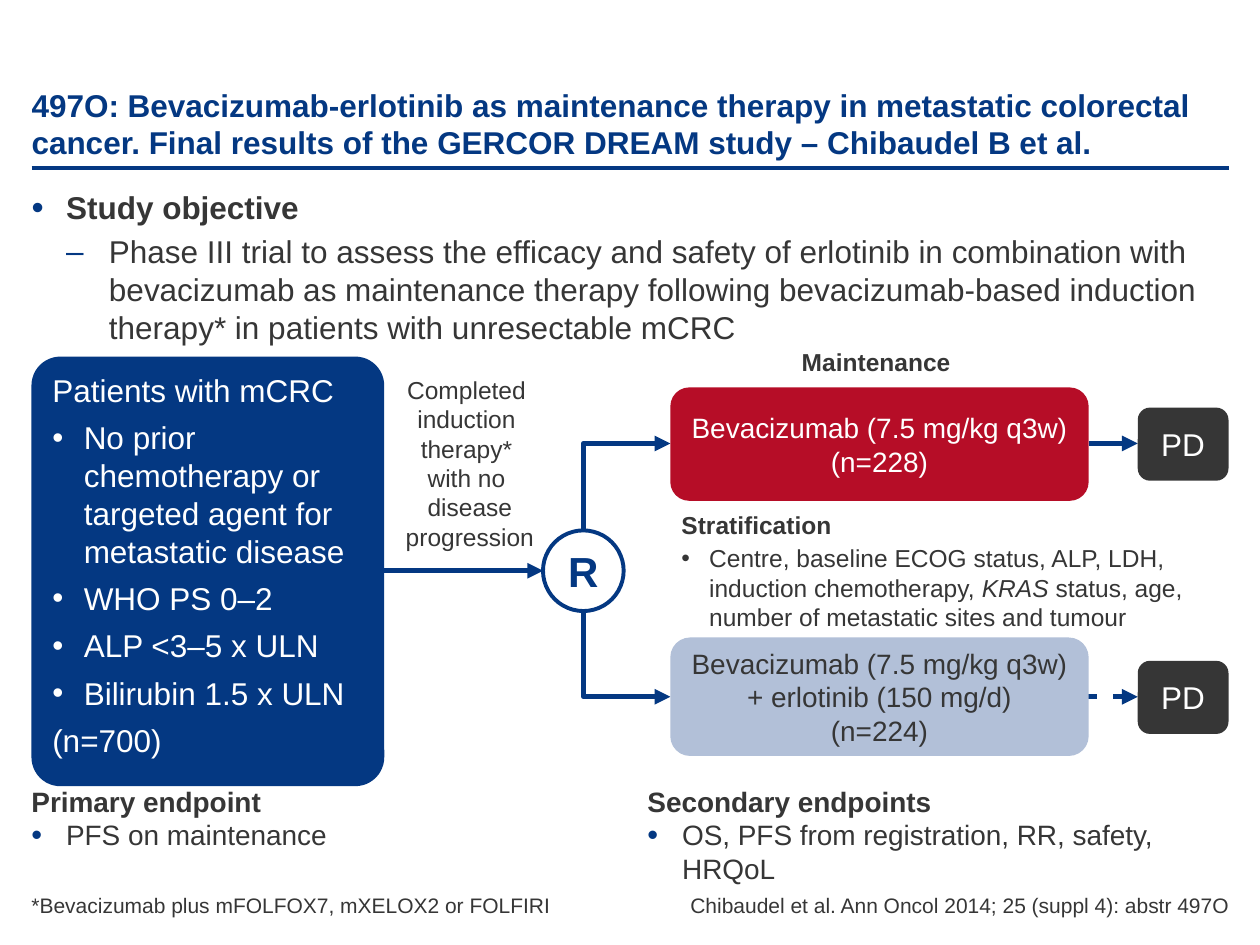
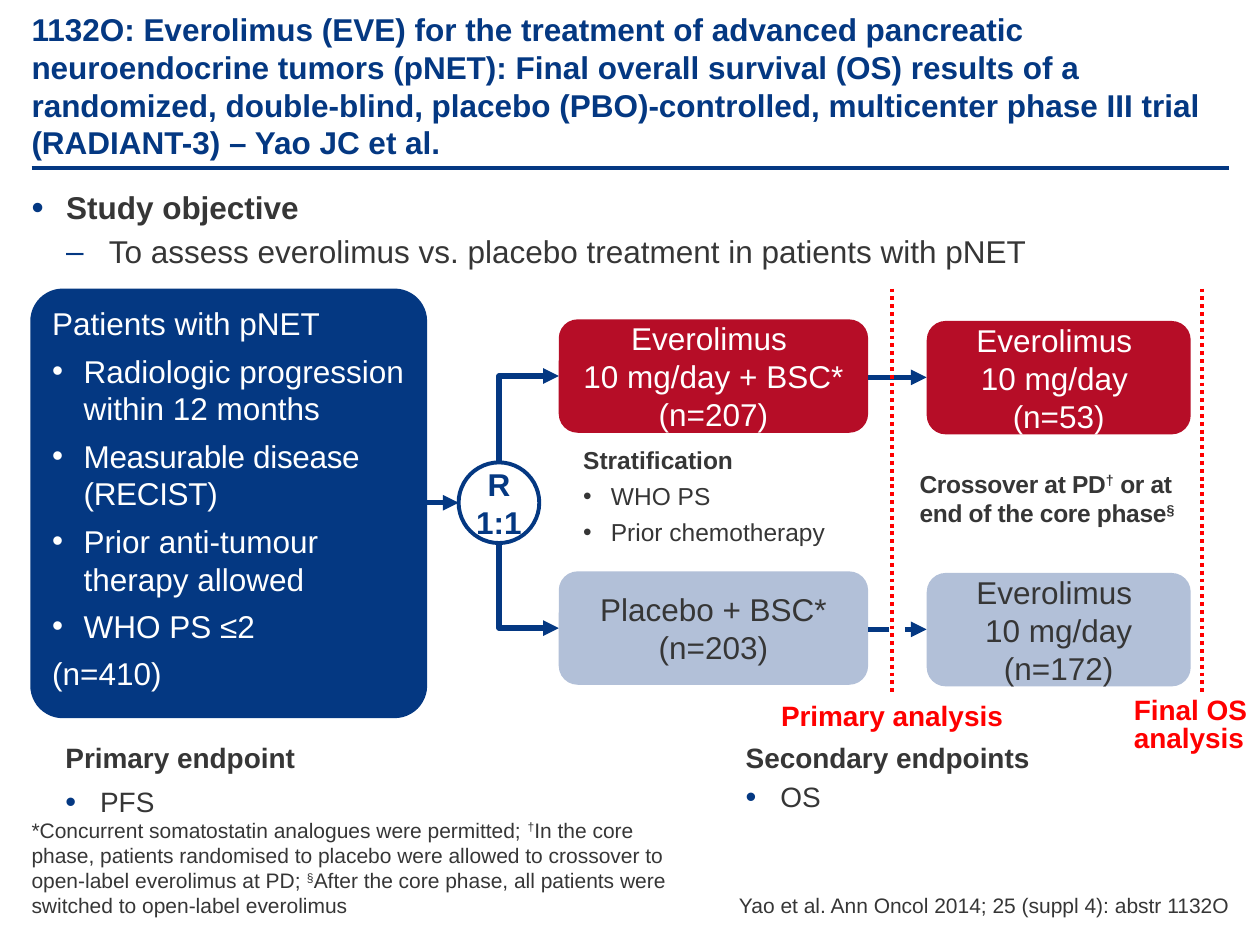
from dataclasses import dataclass, field
from typing import Any, NamedTuple, Optional

from lxml import etree
from pptx import Presentation
from pptx.dml.color import RGBColor
from pptx.enum.dml import MSO_LINE
from pptx.enum.shapes import MSO_CONNECTOR, MSO_SHAPE
from pptx.enum.text import MSO_ANCHOR, MSO_AUTO_SIZE, PP_ALIGN
from pptx.oxml.ns import qn
from pptx.util import Emu, Inches, Pt

LEFT, CENTER, RIGHT = PP_ALIGN.LEFT, PP_ALIGN.CENTER, PP_ALIGN.RIGHT
TOP, MIDDLE, BOTTOM = MSO_ANCHOR.TOP, MSO_ANCHOR.MIDDLE, MSO_ANCHOR.BOTTOM
FIXED, GROW = MSO_AUTO_SIZE.NONE, MSO_AUTO_SIZE.SHAPE_TO_FIT_TEXT
ROUNDED, ELLIPSE = MSO_SHAPE.ROUNDED_RECTANGLE, MSO_SHAPE.OVAL
STRAIGHT, ELBOW = MSO_CONNECTOR.STRAIGHT, MSO_CONNECTOR.ELBOW
DASH, DOTS = MSO_LINE.DASH, MSO_LINE.ROUND_DOT

FONT = "Arial"
NAVY, GREY, WHITE = "043882", "363636", "FFFFFF"
CRIMSON, PALE, RED = "B60D27", "B2C0D8", "FF0000"
COLUMNS, ROWS = 40, 30
CELL = Inches(0.25)
MARGIN, RIGHT_EDGE = 1, 39


class Area(NamedTuple):
    left: float
    top: float
    width: float
    height: float


class Bullet(NamedTuple):
    margin: float
    hanging: float
    symbol: str
    color: Optional[str] = None
    percent: int = 100


class Run(NamedTuple):
    text: str
    formats: dict[str, Any] = {}
    attributes: dict[str, str] = {}


@dataclass
class Line:
    content: Any
    bullet: Optional[Bullet] = None
    formats: dict[str, Any] = field(default_factory=dict)
    spacing: dict[str, Any] = field(default_factory=dict)
    level: int = 0


@dataclass
class Style:
    size: float
    color: str = GREY
    bold: bool = False
    align: Any = LEFT
    anchor: Any = TOP
    insets: tuple[float, float, float, float] = (0.4, 0.2, 0.4, 0.2)
    wrap: bool = True
    fit: Any = FIXED
    after: float = 0


MAIN = Bullet(1.1, 1.1, "•", NAVY, 110)
SUB = Bullet(2.46, 1.36, "–", NAVY)
CRITERION = Bullet(1, 1, "•")
SMALL = Bullet(0.88, 0.88, "•")
PLAIN = {"bold": False}
TIGHT = {"spc": "-20"}
RAISED = {"baseline": "30000"}

TITLE = Style(18, NAVY, True, anchor=BOTTOM, insets=(0, 0.2, 0, 0))
BODY = Style(18, bold=True, insets=(0, 0.2, 0, 0.2), after=3.6)
FOOTNOTE = Style(12, anchor=BOTTOM, insets=(0, 0, 0, 0), fit=GROW)
CITATION = Style(12, align=RIGHT, anchor=BOTTOM, insets=(0, 0, 0, 0), wrap=False, fit=GROW)
POPULATION = Style(18, WHITE, fit=GROW, after=5.4)
FLUSH = (0, 0.2, 0, 0.2)
BOX_INSETS = (0.4, 0, 0.4, 0)


def rgb(color: str) -> RGBColor:
    return RGBColor.from_string(color)


def grid(value: float) -> Emu:
    return Emu(round(value * CELL))


def apply(target: Any, formats: dict[str, Any]) -> None:
    for name, value in formats.items():
        setattr(target, name, value)


def set_bullet(paragraph: Any, bullet: Optional[Bullet]) -> None:
    properties = paragraph._p.get_or_add_pPr()
    margin, hanging = (bullet.margin, bullet.hanging) if bullet else (0, 0)
    properties.set("marL", str(grid(margin)))
    properties.set("indent", str(-grid(hanging)))
    if bullet is None:
        etree.SubElement(properties, qn("a:buNone"))
        return
    if bullet.color:
        holder = etree.SubElement(properties, qn("a:buClr"))
        etree.SubElement(holder, qn("a:srgbClr"), val=bullet.color)
    etree.SubElement(properties, qn("a:buSzPct"), val=str(bullet.percent * 1000))
    etree.SubElement(properties, qn("a:buFont"), typeface=FONT)
    etree.SubElement(properties, qn("a:buChar"), char=bullet.symbol)


def write_run(paragraph: Any, piece: Run, style: Style, formats: dict[str, Any]) -> None:
    for index, text in enumerate(piece.text.split("\n")):
        if index:
            paragraph.add_line_break()
        run = paragraph.add_run()
        run.text = text
        base = {"name": FONT, "size": Pt(style.size), "bold": style.bold}
        apply(run.font, base | formats | piece.formats)
        run.font.color.rgb = rgb(style.color)
        for name, value in piece.attributes.items():
            run._r.get_or_add_rPr().set(name, value)


def write_text(shape: Any, lines: list[Line], style: Style) -> None:
    frame = shape.text_frame
    sides = ("margin_left", "margin_top", "margin_right", "margin_bottom")
    apply(frame, dict(zip(sides, map(grid, style.insets))))
    apply(frame, {"word_wrap": style.wrap, "auto_size": style.fit, "vertical_anchor": style.anchor})
    for index, line in enumerate(lines):
        paragraph = frame.add_paragraph() if index else frame.paragraphs[0]
        base = {"alignment": style.align, "space_before": Pt(0), "space_after": Pt(style.after),
                "level": line.level}
        apply(paragraph, base | line.spacing)
        set_bullet(paragraph, line.bullet)
        pieces = [Run(line.content)] if isinstance(line.content, str) else line.content
        for piece in pieces:
            write_run(paragraph, piece, style, line.formats)


def add_label(slide: Any, area: Area, lines: list[Line], style: Style) -> None:
    write_text(slide.shapes.add_textbox(*map(grid, area)), lines, style)


def fill_placeholder(shape: Any, area: Area, lines: list[Line], style: Style) -> None:
    apply(shape, dict(zip(("left", "top", "width", "height"), map(grid, area))))
    write_text(shape, lines, style)


def add_box(slide: Any, area: Area, color: str, lines: list[Line], style: Style,
            corner: float = 0.167) -> None:
    shape = slide.shapes.add_shape(ROUNDED, *map(grid, area))
    shape.shadow.inherit = False
    shape.adjustments[0] = corner
    shape.fill.solid()
    shape.fill.fore_color.rgb = rgb(color)
    shape.line.fill.background()
    write_text(shape, lines, style)


def add_arm(slide: Any, area: Area, color: str, texts: list[str], size: float) -> None:
    ink = GREY if color == PALE else WHITE
    style = Style(size, ink, align=CENTER, anchor=MIDDLE, insets=BOX_INSETS)
    add_box(slide, area, color, [Line(text) for text in texts], style)


def add_randomisation(slide: Any, left: float, top: float, texts: list[str], size: float) -> None:
    shape = slide.shapes.add_shape(ELLIPSE, *map(grid, Area(left, top, 2.56, 2.56)))
    shape.shadow.inherit = False
    shape.fill.background()
    shape.line.color.rgb = rgb(NAVY)
    shape.line.width = Pt(2.25)
    style = Style(size, NAVY, True, CENTER, MIDDLE, wrap=False)
    write_text(shape, [Line(text) for text in texts], style)


def add_line(slide: Any, start: tuple[float, float], end: tuple[float, float], color: str = NAVY,
             width: float = 3, dash: Any = None, arrow: bool = True, kind: Any = STRAIGHT) -> Any:
    connector = slide.shapes.add_connector(kind, *map(grid, start + end))
    connector.line.color.rgb = rgb(color)
    apply(connector.line, {"width": Pt(width), "dash_style": dash})
    if arrow:
        etree.SubElement(connector.line._get_or_add_ln(), qn("a:tailEnd"), type="triangle")
    etree.SubElement(connector._element.spPr, qn("a:effectLst"))
    return connector


def add_branch(slide: Any, start: tuple[float, float], end: tuple[float, float]) -> None:
    middle_x, middle_y = (start[0] + end[0]) / 2, (start[1] + end[1]) / 2
    half_rise = abs(end[1] - start[1]) / 2
    upward = end[1] < start[1]
    half_run = (end[0] - start[0]) / 2 * (-1 if upward else 1)
    connector = add_line(slide, (middle_x + half_rise, middle_y - half_run),
                         (middle_x - half_rise, middle_y + half_run), kind=ELBOW)
    properties = connector._element.spPr
    properties.find(qn("a:xfrm")).set("rot", str((90 if upward else 270) * 60000))
    properties.find(qn("a:prstGeom")).set("prst", "bentConnector2")


def add_population(slide: Any, area: Area, group: str, criteria: list[Any], count: str) -> None:
    lines = [Line(group), *(Line(text, CRITERION) for text in criteria), Line(count)]
    add_box(slide, area, NAVY, lines, POPULATION, 0.082)


def add_stratification(slide: Any, area: Area, factors: list[Any], after: float) -> None:
    lines = [Line("Stratification"), *(Line(factor, SMALL, PLAIN) for factor in factors)]
    add_label(slide, area, lines, Style(14, bold=True, after=after))


def add_endpoint(slide: Any, area: Area, heading: str, outcome: str, after: float = 0,
                 insets: tuple[float, float, float, float] = (0.4, 0.2, 0.4, 0.2)) -> None:
    lines = [Line(heading), Line(outcome, MAIN, PLAIN)]
    add_label(slide, area, lines, Style(16, bold=True, insets=insets, after=after))


def start_slide(presentation: Any, title: str, objective: str, citation: str,
                citation_width: float, footnote: Any, footnote_area: Area) -> Any:
    slide = presentation.slides.add_slide(presentation.slide_layouts[1])
    width = RIGHT_EDGE - MARGIN
    fill_placeholder(slide.shapes.title, Area(MARGIN, 1, width, 4.12), [Line(title)], TITLE)
    objective_lines = [Line("Study objective", MAIN), Line(objective, SUB, PLAIN, level=1)]
    fill_placeholder(slide.placeholders[1], Area(MARGIN, 5.78, width, 23.2), objective_lines, BODY)
    add_line(slide, (MARGIN, 5.33), (RIGHT_EDGE, 5.33), width=2.25, arrow=False)
    citation_area = Area(RIGHT_EDGE + 0.04 - citation_width, 28.32, citation_width, 0.8)
    add_label(slide, citation_area, [Line(citation)], CITATION)
    add_label(slide, footnote_area, [Line(footnote)], FOOTNOTE)
    return slide


def build_maintenance(presentation: Any) -> None:
    slide = start_slide(
        presentation,
        "497O: Bevacizumab-erlotinib as maintenance therapy in metastatic colorectal cancer. "
        "Final results of the GERCOR DREAM study – Chibaudel B et al.",
        "Phase III trial to assess the efficacy and safety of erlotinib in combination with "
        "bevacizumab as maintenance therapy following bevacizumab-based induction therapy* "
        "in patients with unresectable mCRC",
        "Chibaudel et al. Ann Oncol 2014; 25 (suppl 4): abstr 497O", 17.48,
        "*Bevacizumab plus mFOLFOX7, mXELOX2 or FOLFIRI", Area(MARGIN, 28.32, 18.64, 0.8))
    add_endpoint(slide, Area(MARGIN, 24.7, 18.68, 3.12), "Primary endpoint",
                 "PFS on maintenance", insets=FLUSH)
    add_endpoint(slide, Area(20.16, 24.7, 19.68, 3.12), "Secondary endpoints",
                 "OS, PFS from registration, RR, safety, HRQoL")
    add_randomisation(slide, 17.24, 16.84, ["R"], 24)
    add_stratification(slide, Area(21.24, 16, 18.32, 3.4), [[
        Run("Centre, baseline ECOG status, ALP, LDH, induction chemotherapy, "),
        Run("KRAS", {"italic": True}),
        Run(" status, age, number of metastatic sites and tumour")]], 2)
    add_line(slide, (12.2, 18.12), (17.24, 18.12))
    for circle_edge, middle, dash in ((16.84, 14.08, None), (19.4, 22.12, DASH)):
        add_branch(slide, (18.52, circle_edge), (21.28, middle))
        add_line(slide, (33 if dash else 34.56, middle), (36.12, middle), dash=dash)
        add_arm(slide, Area(36.12, middle - 1.14, 2.88, 2.32), GREY, ["PD"], 18)
    add_population(slide, Area(MARGIN, 11.32, 11.2, 13.64), "Patients with mCRC", [
        "No prior chemotherapy or targeted agent for metastatic disease",
        "WHO PS 0–2", "ALP <3–5 x ULN", "Bilirubin 1.5 x ULN"], "(n=700)")
    add_arm(slide, Area(21.28, 20.24, 13.28, 3.76), PALE,
            ["Bevacizumab (7.5 mg/kg q3w) + erlotinib (150 mg/d)", "(n=224)"], 16)
    add_arm(slide, Area(21.28, 12.3, 13.28, 3.6), CRIMSON,
            ["Bevacizumab (7.5 mg/kg q3w)", "(n=228)"], 16)
    add_label(slide, Area(11.24, 11.7, 7.36, 2.36), [Line(
        "Completed \ninduction \ntherapy* \nwith no \ndisease progression")],
        Style(14, align=CENTER, after=2))
    add_label(slide, Area(25.06, 10.82, 5.72, 1.28), [Line("Maintenance")],
              Style(14, bold=True, after=2))


def build_crossover(presentation: Any) -> None:
    slide = start_slide(
        presentation,
        "1132O: Everolimus (EVE) for the treatment of advanced pancreatic neuroendocrine tumors "
        "(pNET): Final overall survival (OS) results of a randomized, double-blind, placebo "
        "(PBO)-controlled, multicenter phase III trial (RADIANT-3) – Yao JC et al.",
        "To assess everolimus vs. placebo treatment in patients with pNET",
        "Yao et al. Ann Oncol 2014; 25 (suppl 4): abstr 1132O", 16.12,
        [Run("*Concurrent somatostatin analogues were permitted; "),
         Run("†", attributes=RAISED),
         Run("In the core phase, patients randomised to placebo were allowed to crossover to "
             "open-label everolimus at PD; "),
         Run("§", attributes=RAISED),
         Run("After the core phase, all patients were switched to open-label everolimus")],
        Area(MARGIN, 25.9, 21.28, 3.24))
    add_endpoint(slide, Area(2.08, 23.32, 18.68, 3.6), "Primary endpoint", "PFS", 6, FLUSH)
    add_endpoint(slide, Area(23.28, 23.32, 10.12, 3.6), "Secondary endpoints", "OS", 3.2)
    add_randomisation(slide, 14.56, 14.68, ["R", "1:1"], 18)
    add_stratification(slide, Area(18.12, 13.92, 12.32, 3.92), ["WHO PS", "Prior chemotherapy"], 4)
    add_line(slide, (13.44, 15.96), (14.56, 15.96))
    add_population(slide, Area(0.96, 9.16, 12.6, 13.64), "Patients with pNET", [
        "Radiologic progression within 12 months",
        [Run("Measurable disease (RECIST)", attributes=TIGHT)],
        "Prior anti-tumour therapy allowed", "WHO PS ≤2"], "(n=410)")
    arms = (
        (14.68, 11.94, None, CRIMSON, ["Everolimus \n10 mg/day + BSC*", "(n=207)"],
         ["Everolimus \n10 mg/day \n(n=53)"]),
        (17.24, 19.94, DASH, PALE, ["Placebo + BSC* (n=203)"],
         ["Everolimus \n10 mg/day", "(n=172)"]),
    )
    for circle_edge, middle, dash, color, core, extension in arms:
        add_branch(slide, (15.84, circle_edge), (17.74, middle))
        add_arm(slide, Area(17.74, middle - 1.8, 9.82, 3.6), color, core, 18)
        add_line(slide, (27.56, middle + 0.04), (29.42, middle + 0.04), dash=dash)
        add_arm(slide, Area(29.42, middle - 1.75, 8.38, 3.6), color, extension, 18)
    for analysis in (28.32, 38.16):
        add_line(slide, (analysis, 9.16), (analysis, 22.04), RED, 2.25, DOTS, False)
    add_label(slide, Area(24.4, 21.98, 7.96, 1.48), [Line("Primary analysis")],
              Style(16, RED, True, wrap=False, fit=GROW))
    add_label(slide, Area(35.6, 21.96, 4.4, 2.2),
              [Line("Final OS analysis", spacing={"line_spacing": Pt(16)})],
              Style(16, RED, True, insets=(0.4, 0.2, 0, 0.2), fit=GROW))
    add_label(slide, Area(28.8, 14.68, 9.84, 2.28), [Line([
        Run("Crossover at PD", attributes=TIGHT), Run("†", attributes=TIGHT | RAISED),
        Run(" or at end of the core phase", attributes=TIGHT),
        Run("§", attributes=TIGHT | RAISED)])], Style(14, bold=True, fit=GROW))


def main() -> None:
    presentation = Presentation()
    apply(presentation, {"slide_width": grid(COLUMNS), "slide_height": grid(ROWS)})
    build_maintenance(presentation)
    build_crossover(presentation)
    presentation.save("out.pptx")


if __name__ == "__main__":
    main()
